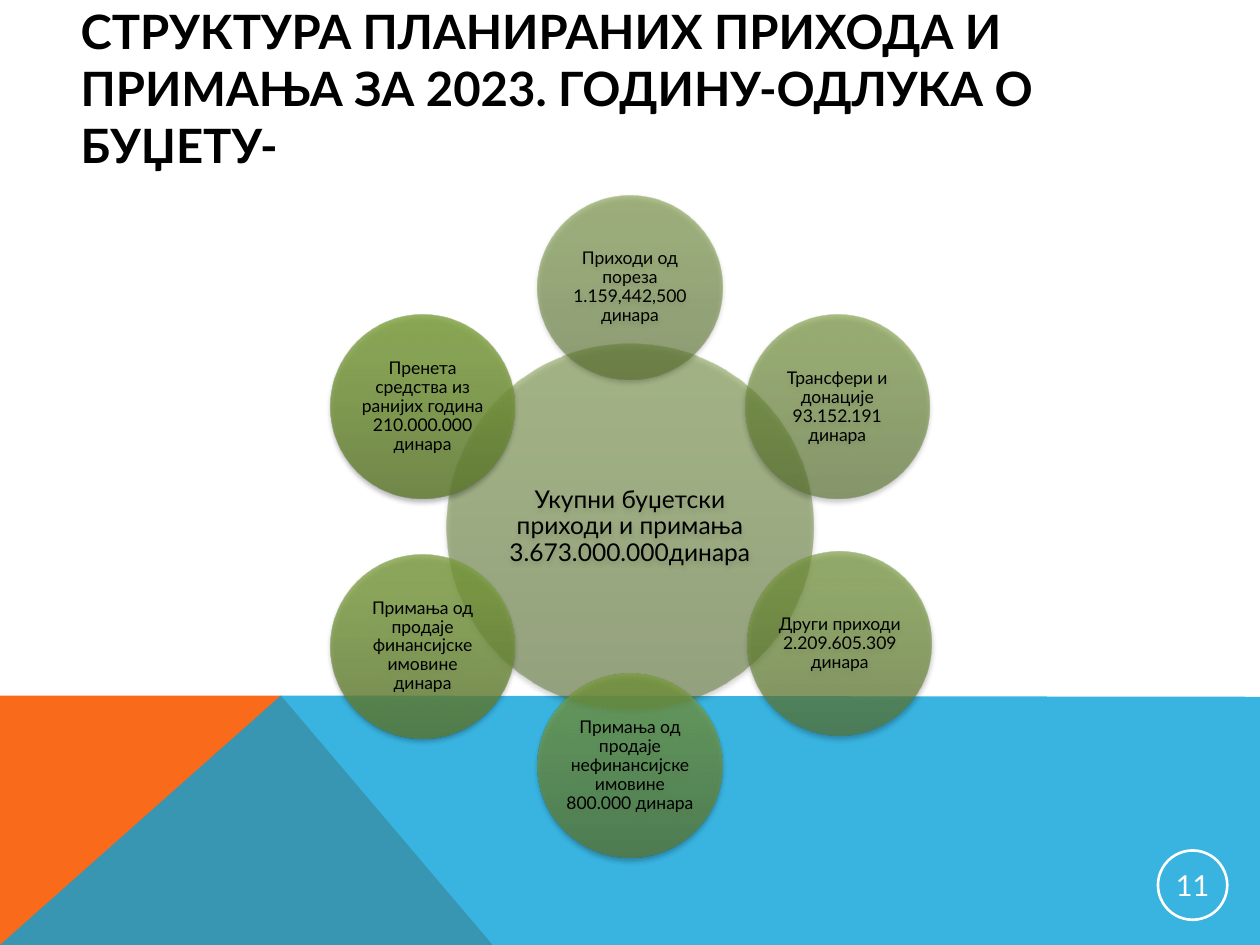
"""Build a slide showing planned budget revenue as a ring of circles around the total."""
from math import cos, radians, sin

from lxml import etree
from pptx import Presentation
from pptx.dml.color import RGBColor
from pptx.enum.shapes import MSO_SHAPE
from pptx.enum.text import MSO_ANCHOR, MSO_AUTO_SIZE, PP_ALIGN
from pptx.oxml.ns import qn
from pptx.util import Inches, Pt

ELLIPSE = MSO_SHAPE.OVAL
MIDDLE = MSO_ANCHOR.MIDDLE
NO_AUTOFIT = MSO_AUTO_SIZE.NONE
LEFT, CENTER = PP_ALIGN.LEFT, PP_ALIGN.CENTER

FONT = "Lato"
BLACK = RGBColor(0x00, 0x00, 0x00)
WHITE = RGBColor(0xFF, 0xFF, 0xFF)
ORANGE = RGBColor(0xF9, 0x6A, 0x1B)
BLUE = RGBColor(0x08, 0xA1, 0xD9)

TITLE = "СТРУКТУРА ПЛАНИРАНИХ ПРИХОДА И ПРИМАЊА ЗА 2023. ГОДИНУ-ОДЛУКА О БУЏЕТУ-"
PAGE_NUMBER = "11"
TOTAL = "Укупни буџетски приходи и примања 3.673.000.000динара"
TOTAL_COLOURS = ("566F2A", "709037", "719235")
NO_NUDGE = (0, 0)
SOURCES = [
    ("Приходи од пореза 1.159,442,500 динара", ("58712B", "729238", "739536"), NO_NUDGE),
    ("Трансфери и донације 93.152.191 динара", ("59732C", "749539", "759837"), NO_NUDGE),
    ("Други приходи 2.209.605.309 динара", ("5B752D", "76983A", "779A39"), (0.02, -0.02)),
    ("Примања од продаје нефинансијске имовине 800.000 динара",
     ("5C772E", "789A3B", "799D3A"), NO_NUDGE),
    ("Примања од продаје финансијске имовине динара",
     ("5E792E", "7A9D3C", "7B9F3B"), NO_NUDGE),
    ("Пренета средства из ранијих година 210.000.000 динара",
     ("607B2F", "7C9F3D", "7DA23C"), NO_NUDGE),
]
BANDS = [
    ([(0, 7.5), (0, 5.52), (2.23, 5.52), (3.91, 7.5)], ORANGE, 100),
    ([(0, 7.5), (2.23, 5.52), (10, 5.53), (10, 7.5)], BLUE, 80),
]
STOPS = (0, 80, 100)
RING_CENTER = (5, 4.18)
RING_RADIUS = 1.9
TOTAL_SIZE, SOURCE_SIZE = 2.91, 1.46


def add_element(parent, tag, **attributes):
    return etree.SubElement(parent, qn(tag), attributes)


def add_colour(parent, colour, opacity):
    element = add_element(parent, "a:srgbClr", val=colour)
    add_element(element, "a:alpha", val=str(opacity * 1000))


def write_text(shape, text, size, colour, inset, alignment=CENTER, bold=False):
    frame = shape.text_frame
    frame.text = text
    frame.word_wrap = True
    frame.auto_size = NO_AUTOFIT
    frame.vertical_anchor = MIDDLE
    frame.margin_left = frame.margin_right = Inches(inset)
    frame.margin_top = frame.margin_bottom = Inches(inset)
    paragraph = frame.paragraphs[0]
    paragraph.alignment = alignment
    font = paragraph.runs[0].font
    font.name, font.size, font.bold = FONT, Pt(size), bold
    font.color.rgb = colour
    return paragraph


def add_band(slide, points, colour, opacity):
    corners = [(Inches(x), Inches(y)) for x, y in points]
    builder = slide.shapes.build_freeform(*corners[0])
    builder.add_line_segments(corners[1:], close=True)
    band = builder.convert_to_shape()
    band.shadow.inherit = False
    band.fill.solid()
    band.fill.fore_color.rgb = colour
    band.line.fill.background()
    element = band.fill._xPr.find(qn("a:solidFill"))[0]
    add_element(element, "a:alpha", val=str(opacity * 1000))


def add_circle(slide, center, size, text, font_size, colours, opacity, inset):
    left, top = (Inches(value - size / 2) for value in center)
    circle = slide.shapes.add_shape(ELLIPSE, left, top, Inches(size), Inches(size))
    properties = circle._element.spPr
    gradient = add_element(properties, "a:gradFill", rotWithShape="1")
    stops = add_element(gradient, "a:gsLst")
    for position, colour in zip(STOPS, colours):
        add_colour(add_element(stops, "a:gs", pos=str(position * 1000)), colour, opacity)
    add_element(gradient, "a:lin", ang="16200000", scaled="0")
    circle.line.fill.background()
    effects = add_element(properties, "a:effectLst")
    shadow = add_element(effects, "a:outerShdw", blurRad=str(Pt(3.1)), dist=str(Pt(1.8)),
                         dir="5400000", rotWithShape="0")
    add_colour(shadow, "000000", 35)
    write_text(circle, text, font_size, BLACK, inset).line_spacing = 0.9


def add_page_number(slide):
    badge = slide.shapes.add_shape(ELLIPSE, Inches(9.19), Inches(6.75),
                                   Inches(0.55), Inches(0.55))
    badge.shadow.inherit = False
    badge.fill.background()
    badge.line.color.rgb = WHITE
    badge.line.width = Pt(1.5)
    write_text(badge, PAGE_NUMBER, 16.5, WHITE, 0.01)


def main():
    presentation = Presentation()
    presentation.slide_width, presentation.slide_height = Inches(10), Inches(7.5)
    slide = presentation.slides.add_slide(presentation.slide_layouts[5])
    for points, colour, opacity in BANDS:
        add_band(slide, points, colour, opacity)

    title = slide.shapes.title
    title.left, title.top = Inches(0.54), Inches(0.27)
    title.width, title.height = Inches(9), Inches(0.85)
    write_text(title, TITLE, 27, BLACK, 0.1, LEFT, bold=True)
    add_page_number(slide)

    add_circle(slide, RING_CENTER, TOTAL_SIZE, TOTAL, 14, TOTAL_COLOURS, 50, 0.02)
    for index, (text, colours, nudge) in enumerate(SOURCES):
        angle = radians(360 / len(SOURCES) * index - 90)
        center = (RING_CENTER[0] + RING_RADIUS * cos(angle) + nudge[0],
                  RING_CENTER[1] + RING_RADIUS * sin(angle) + nudge[1])
        add_circle(slide, center, SOURCE_SIZE, text, 10, colours, 55 + 5 * index, 0.01)
    presentation.save("out.pptx")


if __name__ == "__main__":
    main()
